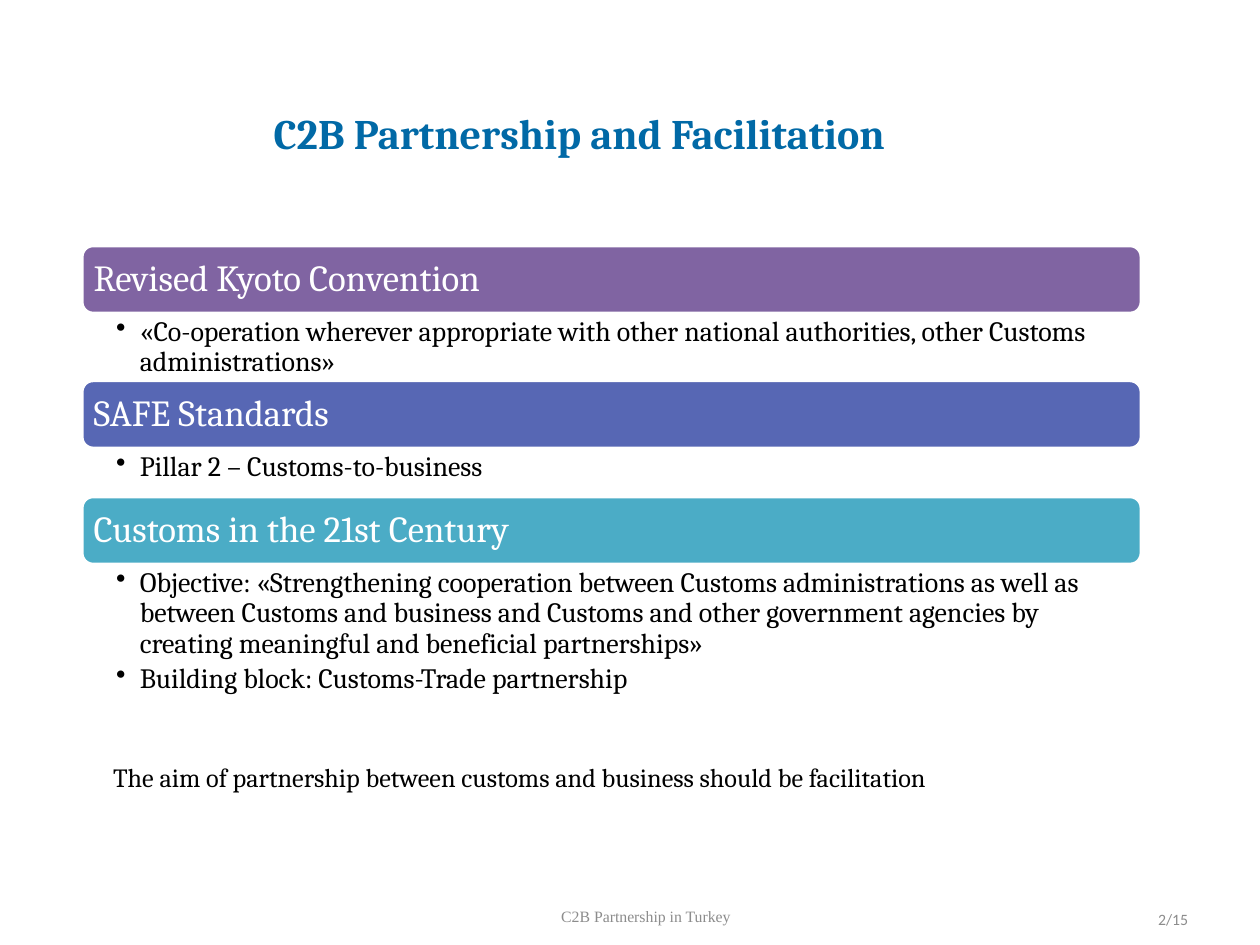
from dataclasses import dataclass

from lxml import etree
from pptx import Presentation
from pptx.dml.color import RGBColor
from pptx.enum.shapes import MSO_SHAPE
from pptx.enum.text import MSO_ANCHOR, PP_ALIGN
from pptx.oxml.ns import qn
from pptx.util import Cm, Pt

ROUNDED = MSO_SHAPE.ROUNDED_RECTANGLE
TOP, MIDDLE = MSO_ANCHOR.TOP, MSO_ANCHOR.MIDDLE
LEFT, CENTER, RIGHT, JUSTIFY = (
    PP_ALIGN.LEFT, PP_ALIGN.CENTER, PP_ALIGN.RIGHT, PP_ALIGN.JUSTIFY)

WHITE = RGBColor(0xFF, 0xFF, 0xFF)
BLACK = RGBColor(0x00, 0x00, 0x00)
GRAY = RGBColor(0x8C, 0x8C, 0x8C)
TITLE_BLUE = RGBColor(0x01, 0x69, 0xA6)
PURPLE = RGBColor(0x80, 0x64, 0xA2)
INDIGO = RGBColor(0x57, 0x67, 0xB4)
TEAL = RGBColor(0x4B, 0xAC, 0xC6)

SECTION_LEFT, SECTION_TOP, SECTION_WIDTH = 1.65, 4.95, 21.36
HEADING_HEIGHT = 1.37
BULLET_INDENT = Cm(0.48)
DEFAULT_INSETS = (0.25, 0.13, 0.25, 0.13)
FOOTER_INSETS = (0.18, 0.1, 0.18, 0.1)
HEADING_INSETS = (0.17, 0.17, 0.17, 0.17)
BULLET_INSETS = (0.69, 0.08, 0.41, 0.08)


@dataclass
class Section:
    heading: str
    color: RGBColor
    points: list[str]
    body_height: float


SECTIONS = [
    Section("Revised Kyoto Convention", PURPLE,
            ["«Co-operation wherever appropriate with other national "
             "authorities, other Customs administrations»"], 1.35),
    Section("SAFE Standards", INDIGO,
            ["Pillar 2 – Customs-to-business"], 0.97),
    Section("Customs in the 21st Century", TEAL,
            ["Objective: «Strengthening cooperation between Customs "
             "administrations as well as between Customs and business and "
             "Customs and other government agencies by creating meaningful "
             "and beneficial partnerships»",
             "Building block: Customs-Trade partnership"], 2.72),
]


def add_bullet(paragraph) -> None:
    properties = paragraph._p.get_or_add_pPr()
    properties.set("marL", str(BULLET_INDENT))
    properties.set("indent", str(-BULLET_INDENT))
    etree.SubElement(properties, qn("a:buChar")).set("char", "•")


def write_text(shape, *lines: str, size: float, color: RGBColor = BLACK,
               font: str = "Cambria", bold: bool = False, align=LEFT,
               anchor=TOP, insets=DEFAULT_INSETS, line_spacing: float = 1.0,
               space_after: float = 0, bullets: bool = False) -> None:
    frame = shape.text_frame
    frame.word_wrap = True
    frame.vertical_anchor = anchor
    (frame.margin_left, frame.margin_top,
     frame.margin_right, frame.margin_bottom) = map(Cm, insets)
    for number, line in enumerate(lines):
        paragraph = frame.add_paragraph() if number else frame.paragraphs[0]
        if bullets:
            add_bullet(paragraph)
        paragraph.alignment = align
        paragraph.line_spacing = line_spacing
        paragraph.space_after = Pt(space_after)
        run = paragraph.add_run()
        run.text = line
        run.font.name = font
        run.font.size = Pt(size)
        run.font.bold = bold
        run.font.color.rgb = color


def add_text(slide, left: float, top: float, width: float, height: float,
             *lines: str, **text_format) -> None:
    box = slide.shapes.add_textbox(Cm(left), Cm(top), Cm(width), Cm(height))
    write_text(box, *lines, **text_format)


def add_section(slide, section: Section, top: float) -> float:
    """Draw a heading bar with its bullets and return the bottom edge."""
    bar = slide.shapes.add_shape(ROUNDED, Cm(SECTION_LEFT), Cm(top),
                                 Cm(SECTION_WIDTH), Cm(HEADING_HEIGHT))
    bar.shadow.inherit = False
    bar.fill.solid()
    bar.fill.fore_color.rgb = section.color
    bar.line.color.rgb = WHITE
    bar.line.width = Pt(2)
    write_text(bar, section.heading, size=21, color=WHITE, anchor=MIDDLE,
               insets=HEADING_INSETS, line_spacing=0.9)
    body_top = top + HEADING_HEIGHT
    add_text(slide, SECTION_LEFT, body_top, SECTION_WIDTH,
             section.body_height, *section.points, size=16,
             insets=BULLET_INSETS, line_spacing=0.9, space_after=3.2,
             bullets=True)
    return body_top + section.body_height


def main() -> None:
    deck = Presentation()
    deck.slide_width, deck.slide_height = Cm(25.4), Cm(19.05)
    slide = deck.slides.add_slide(deck.slide_layouts[5])

    title = slide.shapes.title
    title.left, title.top = Cm(4.6), Cm(2.03)
    title.width, title.height = Cm(14.15), Cm(1.4)
    write_text(title, "C2B Partnership and Facilitation", size=24,
               color=TITLE_BLUE, bold=True, align=CENTER)

    top = SECTION_TOP
    for section in SECTIONS:
        top = add_section(slide, section, top)

    add_text(slide, 2.03, 15.21, 20.02, 0.89,
             "The aim of partnership between customs and business should be "
             "facilitation", size=15, align=JUSTIFY, space_after=4.5)

    footer = dict(size=9, color=GRAY, anchor=MIDDLE, insets=FOOTER_INSETS)
    add_text(slide, 8.69, 17.96, 8.66, 1.02, "C2B Partnership in Turkey",
             font="Times New Roman", align=CENTER, **footer)
    add_text(slide, 18.21, 18.03, 5.92, 1.02, "2/15",
             font="Calibri", align=RIGHT, **footer)

    deck.save("out.pptx")


if __name__ == "__main__":
    main()
